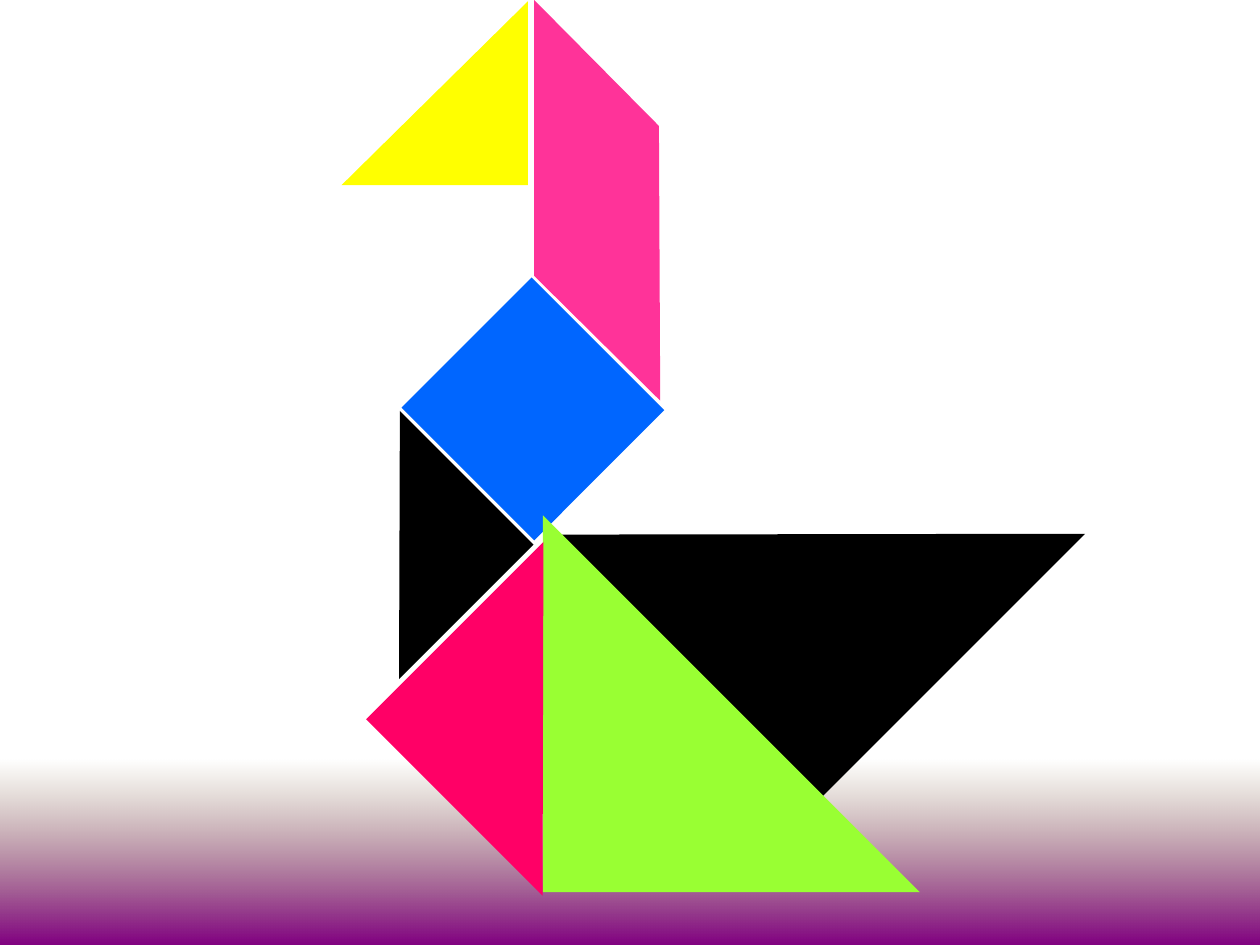
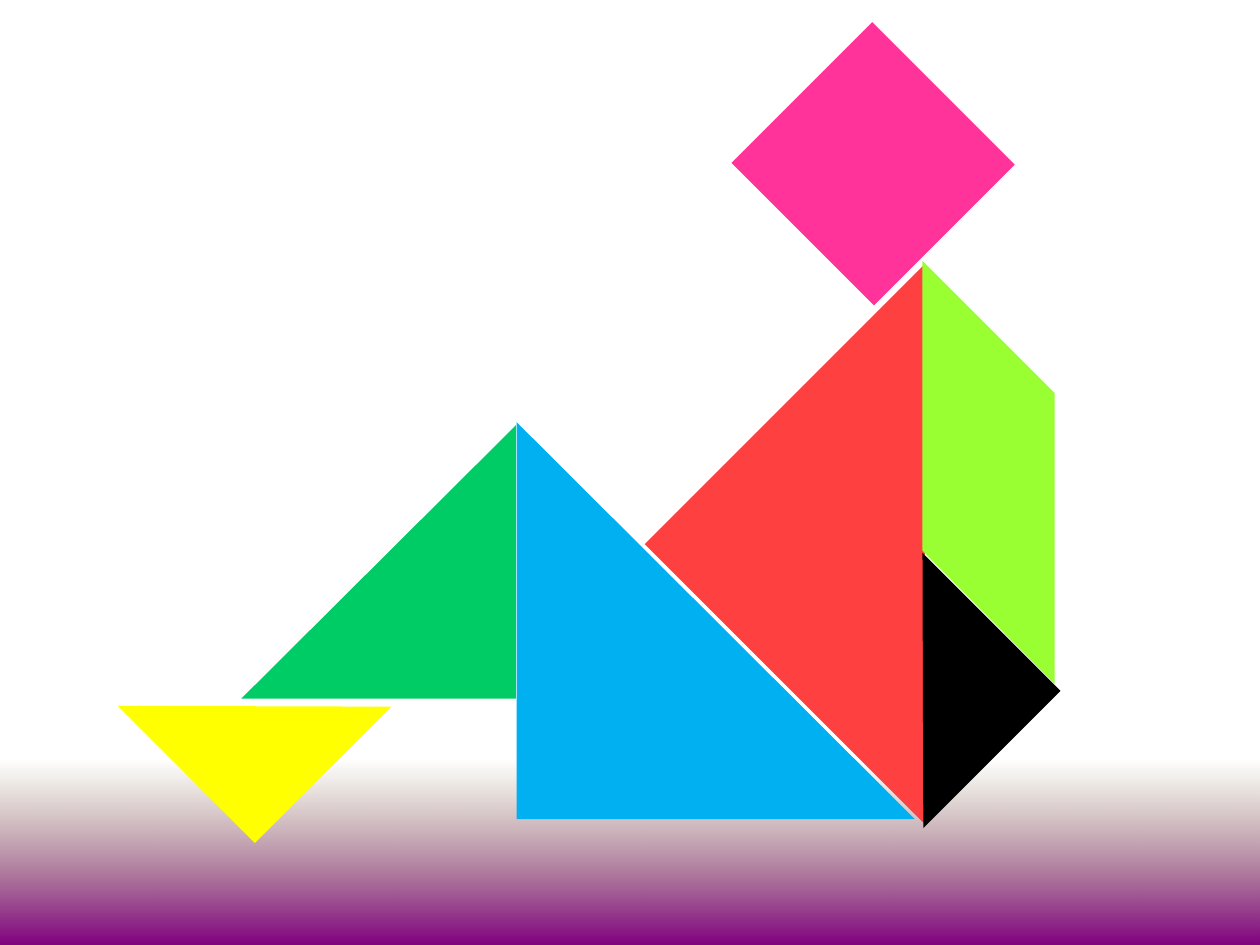
from dataclasses import dataclass

from lxml import etree
from pptx import Presentation
from pptx.dml.color import RGBColor
from pptx.enum.shapes import MSO_SHAPE
from pptx.oxml.ns import qn
from pptx.util import Inches

TRIANGLE = MSO_SHAPE.RIGHT_TRIANGLE
SQUARE = MSO_SHAPE.RECTANGLE


@dataclass(frozen=True)
class Theme:
    ground_top: str = "765E2F"
    ground_bottom: str = "800080"
    blue: str = "0066FF"
    sky: str = "00B0F0"
    black: str = "000000"
    lime: str = "99FF33"
    green: str = "00CC66"
    yellow: str = "FFFF00"
    pink: str = "FF3399"
    crimson: str = "FF0066"
    coral: str = "FF4040"


theme = Theme()

swan = [
    (SQUARE, (3.5, 2.5, 1.46, 1.49), 315, False, theme.blue),
    (TRIANGLE, (5, 2.74, 2.99, 3), 45, True, theme.black),
    (TRIANGLE, (4.31, 4.09, 2.99, 2.99), 90, True, theme.lime),
    (TRIANGLE, (2.72, 0, 1.46, 1.48), 270, False, theme.yellow),
    (TRIANGLE, (2.42, 3.57, 1.5, 1.51), 225, False, theme.black),
    ([(4.24, 2.19), (5.24, 3.18), (5.23, 1), (4.24, 0)], theme.pink),
    (TRIANGLE, (3.32, 4.71, 1.98, 1.99), 45, False, theme.crimson),
]
sitting_person = [
    (TRIANGLE, (5.77, 2.74, 3.14, 3.15), 45, False, theme.coral),
    (TRIANGLE, (1.25, 4.84, 1.54, 1.53), 45, True, theme.yellow),
    (SQUARE, (6.14, 0.5, 1.58, 1.6), 315, False, theme.pink),
    (TRIANGLE, (1.92, 3.37, 2.17, 2.18), 270, False, theme.green),
    (TRIANGLE, (4.1, 3.35, 3.16, 3.15), 0, False, theme.sky),
    (TRIANGLE, (6.55, 4.71, 1.55, 1.54), 225, False, theme.black),
    ([(8.37, 5.43), (8.37, 3.12), (7.32, 2.07), (7.32, 4.37)], theme.lime),
]


def add_preset(shapes, preset, box):
    shape = shapes.add_shape(preset, *map(Inches, box))
    shape.shadow.inherit = False
    shape.line.fill.background()
    return shape


def add_outline(shapes, corners):
    points = [(Inches(x), Inches(y)) for x, y in corners]
    builder = shapes.build_freeform(*points[0])
    builder.add_line_segments(points[1:], close=True)
    shape = builder.convert_to_shape()
    shape.shadow.inherit = False
    shape.line.fill.background()
    return shape


prs = Presentation()
prs.slide_width = Inches(10)
prs.slide_height = Inches(7.5)
blank = prs.slide_layouts[6]

for figure in (swan, sitting_person):
    slide = prs.slides.add_slide(blank)

    ground = add_preset(slide.shapes, SQUARE, (0, 6.03, 10, 1.47))
    ground.fill.gradient()
    ground.fill.gradient_angle = 270
    top_stop, bottom_stop = ground.fill.gradient_stops
    top_stop.color.rgb = RGBColor.from_string(theme.ground_top)
    bottom_stop.color.rgb = RGBColor.from_string(theme.ground_bottom)
    top_color = next(ground.element.iter(qn("a:srgbClr")))
    etree.SubElement(top_color, qn("a:alpha")).set("val", "0")

    tangram = slide.shapes.add_group_shape()
    for *geometry, color in figure:
        if len(geometry) == 1:
            piece = add_outline(tangram.shapes, geometry[0])
        else:
            preset, box, angle, mirrored = geometry
            piece = add_preset(tangram.shapes, preset, box)
            piece.rotation = angle
            if mirrored:
                piece.element.spPr.find(qn("a:xfrm")).set("flipH", "1")
        piece.fill.solid()
        piece.fill.fore_color.rgb = RGBColor.from_string(color)

prs.save("out.pptx")
